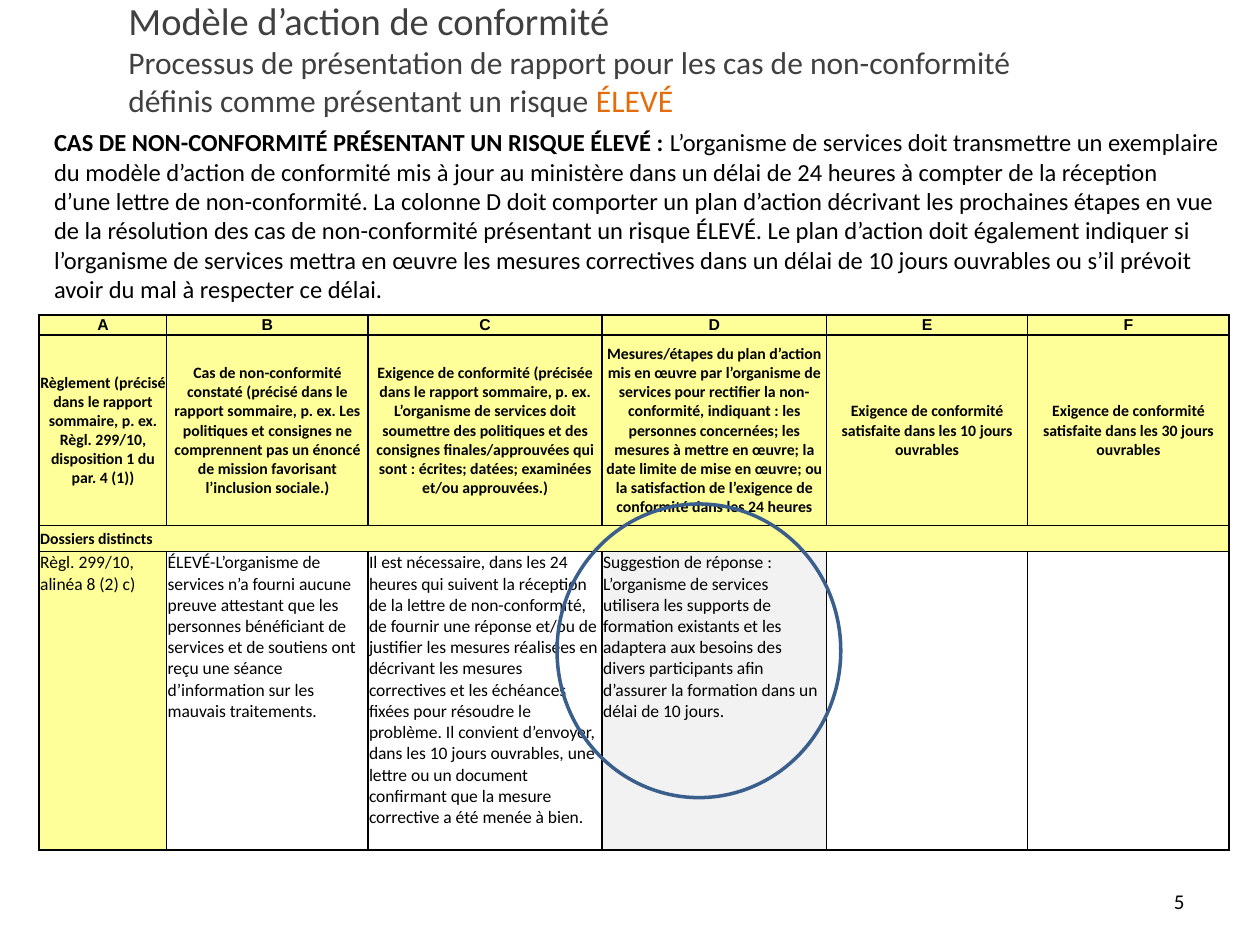
from pptx import Presentation
from pptx import util as u
from pptx.dml.color import RGBColor
from pptx.enum import shapes, text
from pptx.oxml import parse_xml
from pptx.oxml.ns import nsdecls

COLOURS = {"black": "000000", "title": "404040", "high": "E46C0A",
           "header": "FFFF99", "answer": "F2F2F2", "white": "FFFFFF",
           "ring": "3A5F8C"}

# Runs: text, size, colour, bold
TITLE = [
    ("Modèle d’action de conformité", 22, "title", False),
    None,
    ("Processus de présentation de rapport pour les cas de non-conformité "
     "définis comme présentant un risque ", 18, "title", False),
    ("ÉLEVÉ", 18, "high", False),
]
INTRO = [
    ("CAS DE NON-CONFORMITÉ PRÉSENTANT UN RISQUE ÉLEVÉ : ", 14, "black", True),
    ("L’organisme de services doit transmettre un exemplaire du modèle d’action "
     "de conformité mis à jour au ministère dans un délai de 24 heures à compter "
     "de la réception d’une lettre de non-conformité. La colonne D doit comporter "
     "un plan d’action décrivant les prochaines étapes en vue de la résolution des "
     "cas de non-conformité présentant un risque ÉLEVÉ. Le plan d’action doit "
     "également indiquer si l’organisme de services mettra en œuvre les mesures "
     "correctives dans un délai de 10 jours ouvrables ou s’il prévoit avoir du mal "
     "à respecter ce délai.", 14, "black", False),
]
PAGE = [("5", 12, "black", False)]

LETTERS = list("ABCDEF")
HEADINGS = [
    "Règlement (précisé dans le rapport sommaire, p. ex. Règl. 299/10, "
    "disposition 1 du par. 4 (1))",
    "Cas de non-conformité constaté (précisé dans le rapport sommaire, p. ex. Les "
    "politiques et consignes ne comprennent pas un énoncé de mission favorisant "
    "l’inclusion sociale.)",
    "Exigence de conformité (précisée dans le rapport sommaire, p. ex. L’organisme "
    "de services doit soumettre des politiques et des consignes finales/approuvées "
    "qui sont : écrites; datées; examinées et/ou approuvées.)",
    "Mesures/étapes du plan d’action mis en œuvre par l’organisme de services pour "
    "rectifier la non-conformité, indiquant : les personnes concernées; les mesures "
    "à mettre en œuvre; la date limite de mise en œuvre; ou la satisfaction de "
    "l’exigence de conformité dans les 24 heures",
    "Exigence de conformité satisfaite dans les 10 jours ouvrables",
    "Exigence de conformité satisfaite dans les 30 jours ouvrables",
]
SECTION = ["Dossiers distincts"] + [""] * 5
CASE = [
    "Règl. 299/10, alinéa 8 (2) c)",
    "ÉLEVÉ-L’organisme de services n’a fourni aucune preuve attestant que les "
    "personnes bénéficiant de services et de soutiens ont reçu une séance "
    "d’information sur les mauvais traitements.",
    "Il est nécessaire, dans les 24 heures qui suivent la réception de la lettre de "
    "non-conformité, de fournir une réponse et/ou de justifier les mesures réalisées "
    "en décrivant les mesures correctives et les échéances fixées pour résoudre le "
    "problème. Il convient d’envoyer, dans les 10 jours ouvrables, une lettre ou un "
    "document confirmant que la mesure corrective a été menée à bien.",
    "Suggestion de réponse : L’organisme de services utilisera les supports de "
    "formation existants et les adaptera aux besoins des divers participants afin "
    "d’assurer la formation dans un délai de 10 jours.",
    "", "",
]

CENTRE, LEFT, RIGHT = text.PP_ALIGN.CENTER, text.PP_ALIGN.LEFT, text.PP_ALIGN.RIGHT
MIDDLE, TOP = text.MSO_ANCHOR.MIDDLE, text.MSO_ANCHOR.TOP
YELLOW = ["header"] * 6
CASE_FILLS = ["header", "white", "white", "answer", "white", "white"]

# Rows: height in cm, texts, fills, size, bold, font, alignment, anchor
ROWS = [
    (0.36, LETTERS, YELLOW, 9, True, "Arial", CENTRE, MIDDLE),
    (3.84, HEADINGS, YELLOW, 9, True, "Calibri", CENTRE, MIDDLE),
    (0.52, SECTION, YELLOW, 9, True, "Calibri", LEFT, MIDDLE),
    (6.02, CASE, CASE_FILLS, 10, False, "Calibri", LEFT, TOP),
]
COLUMN_WIDTHS = [2.57, 4.06, 4.72, 4.52, 4.06, 4.06]


def rgb(name):
    return RGBColor.from_string(COLOURS[name])


def add_run(paragraph, words, size, colour, bold, font="Calibri"):
    run = paragraph.add_run()
    run.text = words
    run.font.size, run.font.bold, run.font.name = u.Pt(size), bold, font
    run.font.color.rgb = rgb(colour)


def add_text(slide, place, runs, anchor=TOP, align=LEFT):
    """Add a wrapped text box; a None among the runs is a line break."""
    frame = slide.shapes.add_textbox(*map(u.Cm, place)).text_frame
    frame.word_wrap, frame.vertical_anchor = True, anchor
    paragraph = frame.paragraphs[0]
    paragraph.alignment = align
    for run in runs:
        if run is None:
            paragraph.add_line_break()
        else:
            add_run(paragraph, *run)


def set_borders(cell):
    properties = cell._tc.get_or_add_tcPr()
    for position, side in enumerate(("lnL", "lnR", "lnT", "lnB")):
        properties.insert(position, parse_xml(
            f'<a:{side} {nsdecls("a")} w="{u.Pt(1)}"><a:solidFill>'
            f'<a:srgbClr val="{COLOURS["black"]}"/></a:solidFill></a:{side}>'))


def add_compliance_table(slide):
    heights = [row[0] for row in ROWS]
    place = (0.79, 6.35, sum(COLUMN_WIDTHS), sum(heights))
    table = slide.shapes.add_table(
        len(ROWS), len(COLUMN_WIDTHS), *map(u.Cm, place)).table
    for column, width in zip(table.columns, COLUMN_WIDTHS):
        column.width = u.Cm(width)
    for r, (height, texts, fills, size, bold, font, align, anchor) in enumerate(ROWS):
        table.rows[r].height = u.Cm(height)
        for c, (words, fill) in enumerate(zip(texts, fills)):
            cell = table.cell(r, c)
            cell.margin_left = cell.margin_right = cell.margin_top = u.Cm(0.02)
            cell.margin_bottom = 0
            cell.vertical_anchor = anchor
            cell.fill.solid()
            cell.fill.fore_color.rgb = rgb(fill)
            set_borders(cell)
            paragraph = cell.text_frame.paragraphs[0]
            paragraph.alignment = align
            if words:
                add_run(paragraph, words, size, "black", bold, font)
            else:
                paragraph.font.size = u.Pt(size)
    section = ROWS.index(next(row for row in ROWS if row[1] is SECTION))
    table.cell(section, 0).merge(table.cell(section, len(COLUMN_WIDTHS) - 1))


def add_ring(slide, place):
    ring = slide.shapes.add_shape(
        shapes.MSO_SHAPE.FLOWCHART_CONNECTOR, *map(u.Cm, place))
    ring.shadow.inherit = False
    ring.fill.background()
    ring.line.color.rgb = rgb("ring")
    ring.line.width = u.Pt(2)


def main():
    deck = Presentation()
    deck.slide_width, deck.slide_height = u.Cm(25.4), u.Cm(19.05)
    slide = deck.slides.add_slide(deck.slide_layouts[6])
    add_text(slide, (18.21, 17.65, 5.92, 1.02), PAGE, MIDDLE, RIGHT)
    add_compliance_table(slide)
    add_text(slide, (0.84, 2.44, 24, 3.84), INTRO)
    add_text(slide, (2.34, 0.43, 19.05, 1.47), TITLE, MIDDLE)
    add_ring(slide, (11.23, 10.16, 5.72, 5.92))
    deck.save("out.pptx")


if __name__ == "__main__":
    main()
